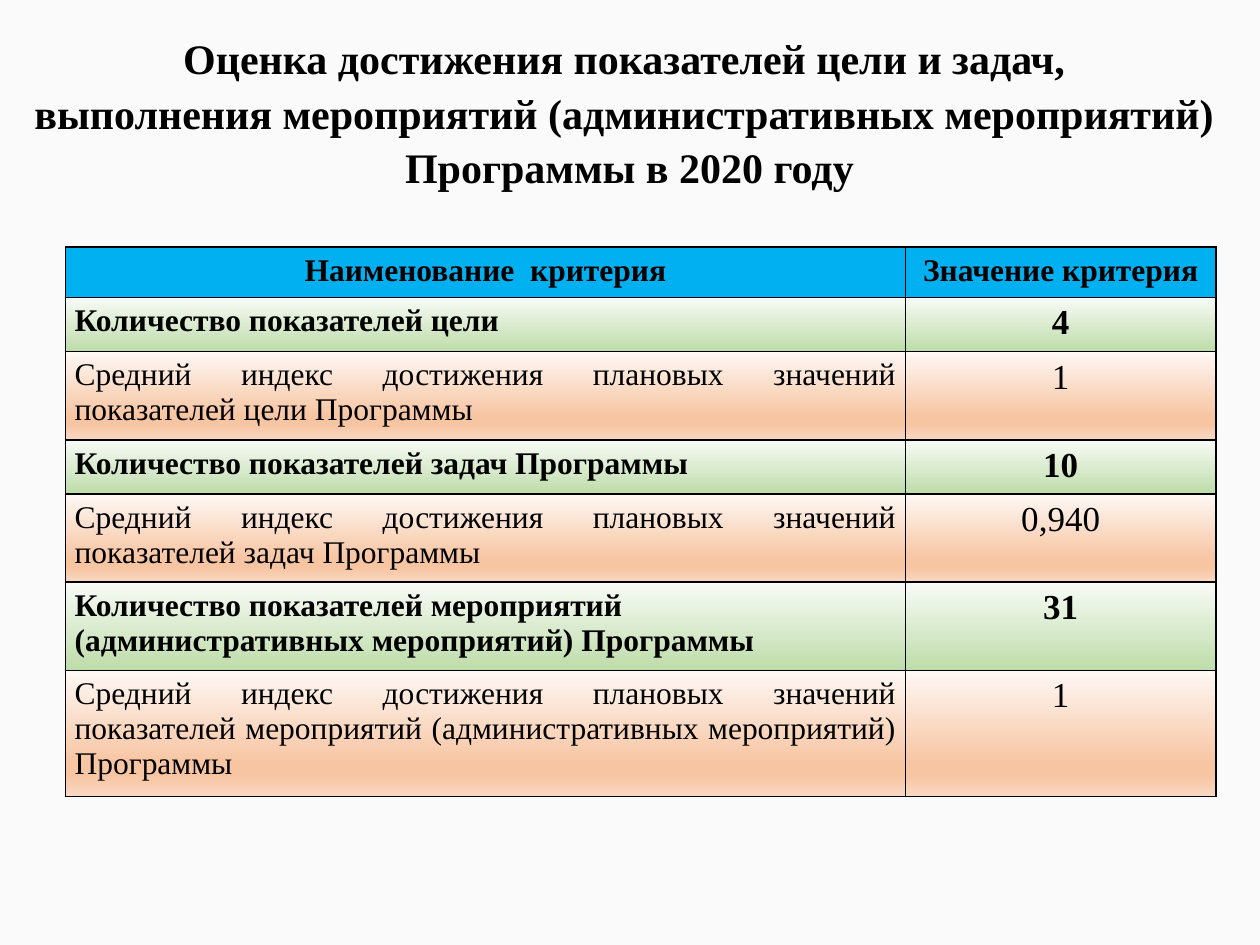
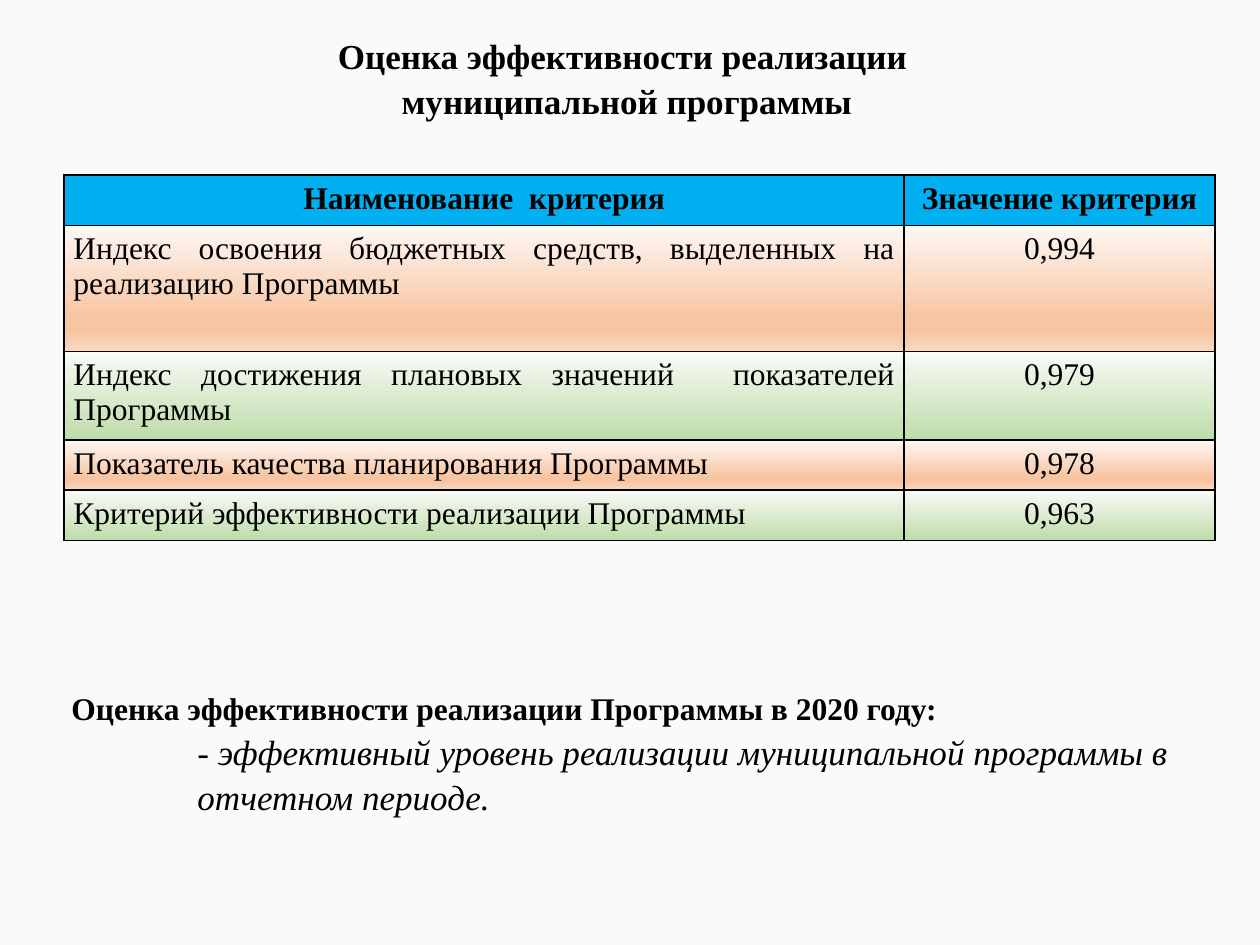
import pptx
import pptx.util
import pptx.dml.color
import pptx.enum.text
import pptx.oxml.ns
from dataclasses import dataclass
from lxml import etree

Pt = pptx.util.Pt
ALIGN = pptx.enum.text.PP_ALIGN
qn = pptx.oxml.ns.qn


@dataclass(frozen=True)
class Theme:
    font: str = "Times New Roman"
    ground: str = "FAFAFA"
    ink: str = "000000"
    header: tuple = ((0, "00B0F0"),)
    green: tuple = ((0, "F8FBF6"), (100, "BEDCAA"))
    orange: tuple = ((0, "FEF8F5"), (74, "F7C5A2"), (83, "F7C5A2"), (100, "FAD8C1"))
    border: float = 0.96
    body: int = 18
    large: int = 20
    heading: int = 24
    spacing: float = 1.09
    columns: tuple = (480, 177.5)


class Deck:
    def __init__(self, theme):
        self.theme = theme
        self.prs = pptx.Presentation()
        self.prs.slide_width, self.prs.slide_height = Pt(720), Pt(540)
        self.s = None

    def rgb(self, value):
        return pptx.dml.color.RGBColor.from_string(value)

    def slide(self):
        self.s = self.prs.slides.add_slide(self.prs.slide_layouts[5])
        fill = self.s.background.fill
        fill.solid()
        fill.fore_color.rgb = self.rgb(self.theme.ground)

    def place(self, sp, box):
        for name, value in zip(("left", "top", "width", "height"), box):
            setattr(sp, name, Pt(value))

    def frame(self, tf):
        settings = {
            "word_wrap": True,
            "auto_size": pptx.enum.text.MSO_AUTO_SIZE.NONE,
            "vertical_anchor": pptx.enum.text.MSO_ANCHOR.TOP,
            "margin_left": Pt(7.2),
            "margin_right": Pt(7.2),
            "margin_top": Pt(3.6),
            "margin_bottom": Pt(3.6),
        }
        for name, value in settings.items():
            setattr(tf, name, value)

    def text(self, p, words, align=ALIGN.LEFT, spacing=1.0, **style):
        p.alignment = align
        p.line_spacing = spacing
        r = p.add_run()
        r.text = words
        values = {"name": self.theme.font, "size": self.theme.body, "bold": False, "italic": False} | style
        values["size"] = Pt(values["size"])
        for name, value in values.items():
            setattr(r.font, name, value)
        r.font.color.rgb = self.rgb(self.theme.ink)

    def title(self, lines, box, size):
        sp = self.s.shapes.title
        self.place(sp, box)
        tf = sp.text_frame
        self.frame(tf)
        for i, line in enumerate(lines):
            p = tf.add_paragraph() if i else tf.paragraphs[0]
            self.text(p, line, ALIGN.CENTER, self.theme.spacing, size=size, bold=True)

    def solid(self, parent, color):
        fill = etree.SubElement(parent, qn("a:solidFill"))
        etree.SubElement(fill, qn("a:srgbClr"), val=color)

    def paint(self, cell, stops):
        tc_pr = cell._tc.get_or_add_tcPr()
        for side in ("lnL", "lnR", "lnT", "lnB"):
            ln = etree.SubElement(tc_pr, qn(f"a:{side}"), w=str(Pt(self.theme.border)))
            self.solid(ln, self.theme.ink)
        if len(stops) == 1:
            self.solid(tc_pr, stops[0][1])
            return
        grad = etree.SubElement(tc_pr, qn("a:gradFill"), rotWithShape="1")
        gs_list = etree.SubElement(grad, qn("a:gsLst"))
        for position, color in stops:
            gs = etree.SubElement(gs_list, qn("a:gs"), pos=str(position * 1000))
            etree.SubElement(gs, qn("a:srgbClr"), val=color)
        etree.SubElement(grad, qn("a:lin"), ang="5400000", scaled="0")

    def cell(self, cell, words, stops, align, margin=7.2, **style):
        cell.margin_left = cell.margin_right = Pt(margin)
        cell.margin_top = cell.margin_bottom = Pt(3.6)
        self.text(cell.text_frame.paragraphs[0], words, align, **style)
        self.paint(cell, stops)

    def criteria(self, left, top, rows, value_size):
        t = self.theme
        heights = [28.8] + [row[0] for row in rows]
        gf = self.s.shapes.add_table(len(heights), 2, Pt(left), Pt(top), Pt(sum(t.columns)), Pt(sum(heights)))
        table = gf.table
        table.first_row = table.horz_banding = False
        for column, width in zip(table.columns, t.columns):
            column.width = Pt(width)
        for row, height in zip(table.rows, heights):
            row.height = Pt(height)
        for i, words in enumerate(("Наименование  критерия", "Значение критерия")):
            self.cell(table.cell(0, i), words, t.header, ALIGN.CENTER, bold=True)
        for i, (height, stops, bold, align, label, value) in enumerate(rows, 1):
            self.cell(table.cell(i, 0), label, stops, align, 5.3, bold=bold)
            self.cell(table.cell(i, 1), value, stops, ALIGN.CENTER, size=value_size, bold=bold)

    def conclusion(self, box, heading, verdict):
        sp = self.s.shapes.add_textbox(*map(Pt, box))
        tf = sp.text_frame
        self.frame(tf)
        spacing = self.theme.spacing
        self.text(tf.paragraphs[0], heading, spacing=spacing, bold=True)
        p = tf.add_paragraph()
        p._p.get_or_add_pPr().set("marL", str(Pt(72)))
        self.text(p, verdict, spacing=spacing, size=self.theme.large, italic=True)


def main():
    t = Theme()
    deck = Deck(t)
    justify = ALIGN.JUSTIFY

    deck.slide()
    deck.title(
        (
            "Оценка достижения показателей цели и задач, ",
            "выполнения мероприятий (административных мероприятий) ",
            "Программы в 2020 году",
        ),
        (-0.7, 12.2, 720.7, 94.3),
        t.heading,
    )
    index = "Средний индекс достижения плановых значений показателей "
    count = "Количество показателей "
    measures = "мероприятий (административных мероприятий) Программы"
    deck.criteria(37.4, 141.1, (
        (31, t.green, True, justify, count + "цели", "4"),
        (50.4, t.orange, False, justify, index + "цели Программы", "1"),
        (31, t.green, True, justify, count + "задач Программы", "10"),
        (50.4, t.orange, False, justify, index + "задач Программы", "0,940"),
        (50.4, t.green, True, ALIGN.LEFT, count + measures, "31"),
        (72, t.orange, False, justify, index + measures, "1"),
    ), t.large)

    deck.slide()
    deck.title(
        ("Оценка эффективности реализации ", "муниципальной программы"),
        (23.8, 13.7, 668.9, 55.4),
        t.large,
    )
    deck.criteria(36.7, 100.1, (
        (72, t.orange, False, justify, "Индекс освоения бюджетных средств, выделенных на реализацию Программы", "0,994"),
        (50.4, t.green, False, justify, "Индекс достижения плановых значений  показателей Программы", "0,979"),
        (28.8, t.orange, False, justify, "Показатель качества планирования Программы", "0,978"),
        (28.8, t.green, False, justify, "Критерий эффективности реализации Программы", "0,963"),
    ), t.body)
    deck.conclusion(
        (33.8, 388, 652.3, 102),
        "Оценка эффективности реализации Программы в 2020 году:",
        "- эффективный уровень реализации муниципальной программы в отчетном периоде.",
    )
    deck.prs.save("out.pptx")


if __name__ == "__main__":
    main()
